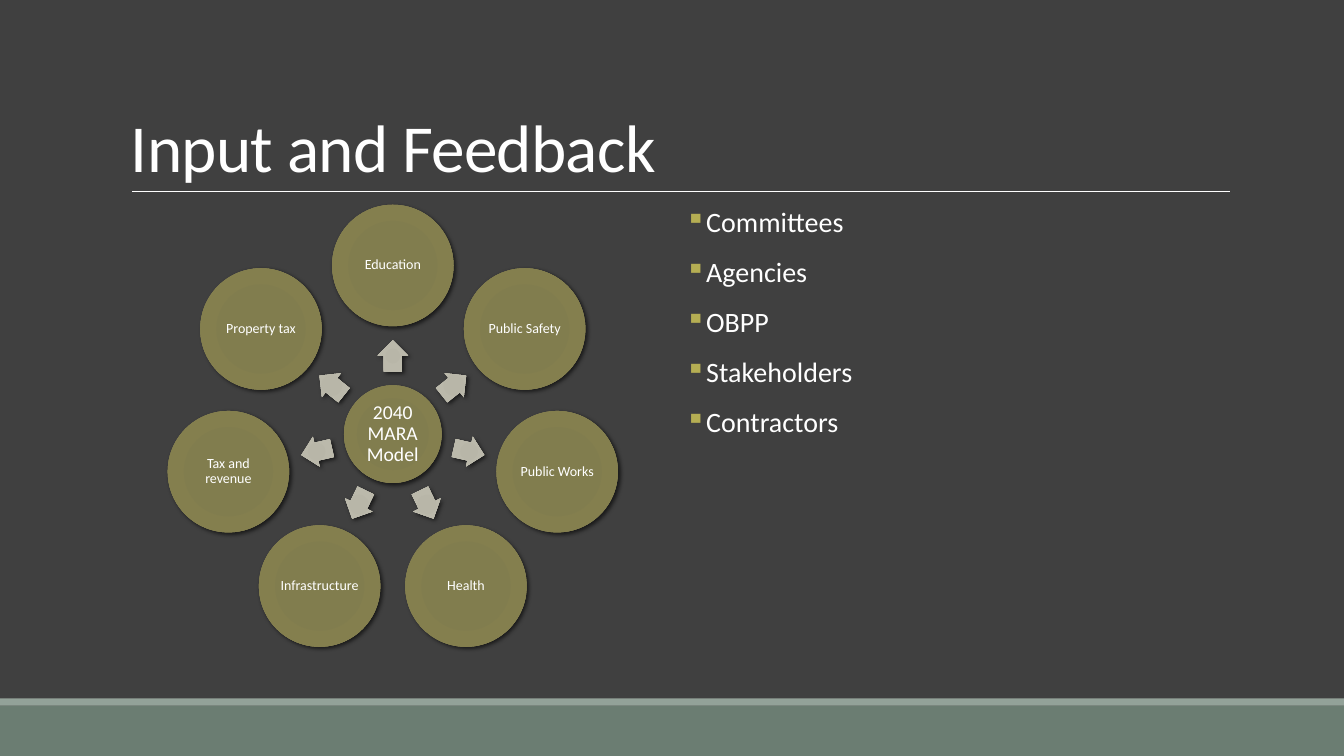
import math
import pptx
import pptx.dml.color
import pptx.enum.shapes
import pptx.enum.text
import pptx.oxml
import pptx.oxml.ns
import pptx.util

Cm = pptx.util.Cm
Pt = pptx.util.Pt
color = pptx.dml.color.RGBColor.from_string
Shape = pptx.enum.shapes.MSO_SHAPE
Anchor = pptx.enum.text.MSO_ANCHOR
Align = pptx.enum.text.PP_ALIGN
qn = pptx.oxml.ns.qn
NAMESPACE = pptx.oxml.ns.nsdecls("a")

OLIVE = [(0, "817C4C"), (34, "817D4E"), (70, "847F4E"), (100, "868256")]
STONE = [(0, "B6B5A6"), (34, "B8B6A8"), (70, "BBB9AB"), (100, "C2C1B4")]


def write_text(shape, text, size=20, anchor=Anchor.TOP, align=Align.LEFT,
               margins=(0.25, 0.13), line_spacing=0.9, before=0, after=0,
               letter_spacing=0, bullet=None, bullet_color="B5AE53", indent=0.41):
    frame = shape.text_frame
    frame.word_wrap = True
    frame.vertical_anchor = anchor
    frame.margin_left = frame.margin_right = Cm(margins[0])
    frame.margin_top = frame.margin_bottom = Cm(margins[1])
    for index, line in enumerate(text.split("\n")):
        paragraph = frame.add_paragraph() if index else frame.paragraphs[0]
        paragraph.alignment = align
        paragraph.line_spacing = line_spacing
        paragraph.space_before = Pt(before)
        paragraph.space_after = Pt(after)
        run = paragraph.add_run()
        run.text = line
        run.font.name = "Calibri"
        run.font.size = Pt(size)
        run.font.color.rgb = color("FFFFFF")
        if letter_spacing:
            run.font._element.set("spc", str(round(letter_spacing * 100)))
        if bullet:
            properties = paragraph._p.get_or_add_pPr()
            properties.set("marL", str(Cm(indent)))
            properties.set("indent", str(-Cm(indent)))
            properties.append(pptx.oxml.parse_xml(
                f'<a:buClr {NAMESPACE}><a:srgbClr val="{bullet_color}"/></a:buClr>'))
            properties.append(pptx.oxml.parse_xml(f'<a:buChar {NAMESPACE} char="{bullet}"/>'))


def add_raised_shape(kind, center_x, center_y, width, height, stops):
    shape = slide.shapes.add_shape(
        kind, Cm(center_x - width / 2), Cm(center_y - height / 2), Cm(width), Cm(height))
    stop_xml = "".join(
        f'<a:gs pos="{position * 1000}"><a:srgbClr val="{value}"/></a:gs>'
        for position, value in stops)
    shape._element.spPr.find(qn("a:prstGeom")).addnext(pptx.oxml.parse_xml(
        f'<a:gradFill {NAMESPACE} rotWithShape="1"><a:gsLst>{stop_xml}</a:gsLst>'
        '<a:path path="circle"><a:fillToRect l="100000" t="100000" r="100000" b="100000"/>'
        '</a:path></a:gradFill>'))
    shape.line.fill.background()
    shape.shadow.inherit = False
    shape._element.spPr.find(qn("a:effectLst")).append(pptx.oxml.parse_xml(
        f'<a:outerShdw {NAMESPACE} blurRad="{Pt(3)}" dist="{Pt(2)}" dir="2700000" '
        'rotWithShape="0"><a:srgbClr val="000000"><a:alpha val="60000"/></a:srgbClr>'
        '</a:outerShdw>'))
    return shape


presentation = pptx.Presentation()
presentation.slide_width = Cm(33.87)
presentation.slide_height = Cm(19.05)
slide = presentation.slides.add_slide(presentation.slide_layouts[6])
slide.background.fill.solid()
slide.background.fill.fore_color.rgb = color("404040")

for top, height, fill in [(17.78, 1.27, "6B7D72"), (17.6, 0.18, "93A299")]:
    band = slide.shapes.add_shape(
        Shape.RECTANGLE, 0, Cm(top), presentation.slide_width, Cm(height))
    band.fill.solid()
    band.fill.fore_color.rgb = color(fill)
    band.line.fill.background()
    band.shadow.inherit = False

title_rule = slide.shapes.add_connector(
    pptx.enum.shapes.MSO_CONNECTOR.STRAIGHT, Cm(3.33), Cm(4.82), Cm(31), Cm(4.82))
title_rule.line.color.rgb = color("FFFFFF")
title_rule.line.width = Pt(0.5)
title_rule._element.spPr.append(pptx.oxml.parse_xml(f"<a:effectLst {NAMESPACE}/>"))

title = slide.shapes.add_textbox(Cm(3.05), Cm(0.79), Cm(27.94), Cm(4.04))
write_text(title, "Input and Feedback", size=48, anchor=Anchor.BOTTOM,
           line_spacing=0.85, letter_spacing=-0.5)

hub_x, hub_y = 9.9, 10.94
circle_orbit, arrow_orbit = 4.25, 1.97
hub = add_raised_shape(Shape.OVAL, hub_x, hub_y, 2.46, 2.46, OLIVE)
write_text(hub, "2040 MARA Model", size=14, anchor=Anchor.MIDDLE,
           align=Align.CENTER, margins=(0.05, 0.05))

topics = ["Education", "Public Safety", "Public Works", "Health",
          "Infrastructure", "Tax and revenue", "Property tax"]
for index, topic in enumerate(topics):
    degrees = index * 360 / len(topics) - 90
    across = math.cos(math.radians(degrees))
    down = math.sin(math.radians(degrees))
    arrow = add_raised_shape(Shape.RIGHT_ARROW, hub_x + arrow_orbit * across,
                             hub_y + arrow_orbit * down, 0.79, 0.77, STONE)
    arrow.adjustments[0] = 0.6
    arrow.adjustments[1] = 0.5
    arrow.rotation = degrees % 360
    circle = add_raised_shape(Shape.OVAL, hub_x + circle_orbit * across,
                              hub_y + circle_orbit * down, 3.06, 3.06, OLIVE)
    write_text(circle, topic, size=10, anchor=Anchor.MIDDLE,
               align=Align.CENTER, margins=(0.03, 0.03))

sources = slide.shapes.add_textbox(Cm(17.27), Cm(5.13), Cm(13.72), Cm(11.18))
write_text(sources, "Committees\nAgencies\nOBPP\nStakeholders\nContractors",
           margins=(0, 0.13), before=12, after=2, bullet="▪")

presentation.save("out.pptx")
